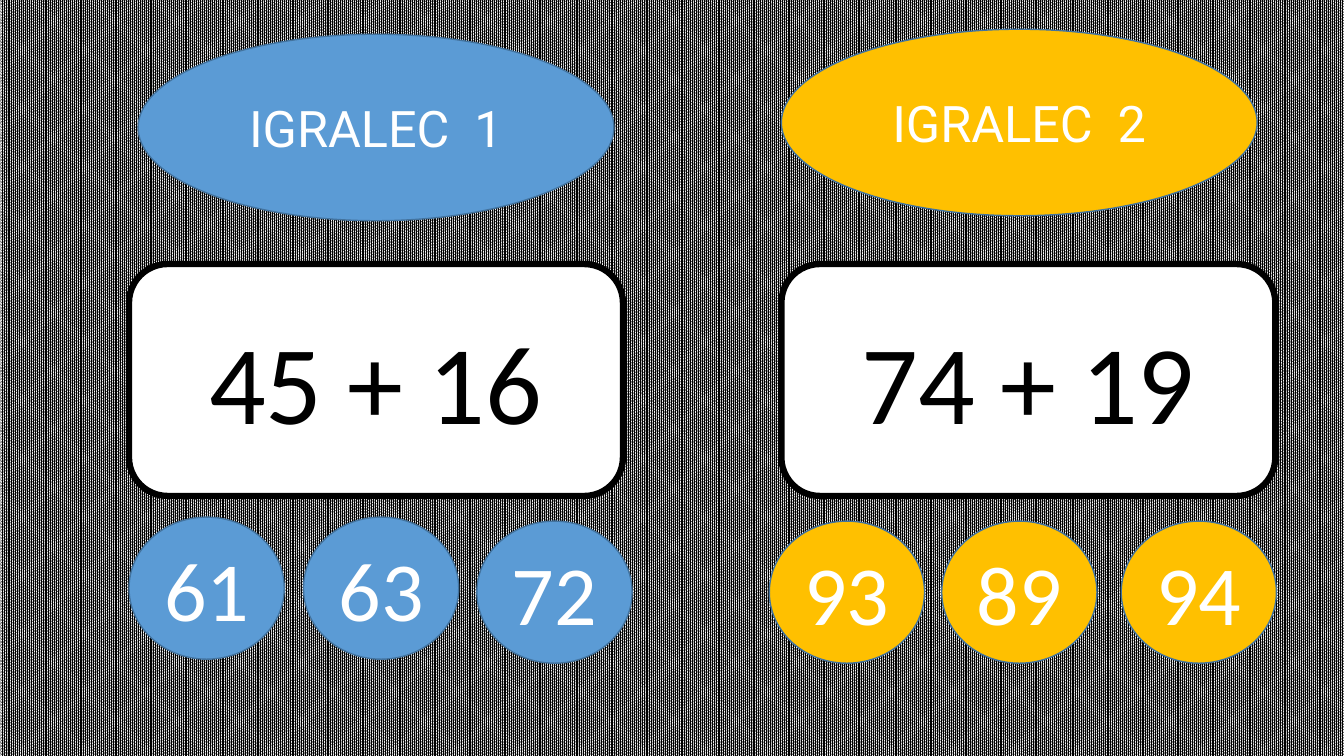
from dataclasses import dataclass

from pptx import Presentation
from pptx.dml.color import RGBColor
from pptx.enum.dml import MSO_PATTERN
from pptx.enum.shapes import MSO_SHAPE
from pptx.enum.text import MSO_ANCHOR, PP_ALIGN
from pptx.util import Inches, Pt

WIDTH, HEIGHT = Inches(13.33), Inches(7.5)
BLACK, WHITE = "000000", "FFFFFF"
BLUE, GOLD, OUTLINE = "5B9BD5", "FFC000", "43739E"
BADGE_SIZE = (35.4, 24.67)
CARD_SIZE = (36.75, 30.67)
ANSWER_SIZE = (11.55, 18.8)
CARD_TOP = 34.93


@dataclass
class Player:
    name: str
    color: str
    badge_place: tuple
    sum_text: str
    card_left: float
    answers: tuple


PLAYERS = (
    Player("IGRALEC  1", BLUE, (10.28, 4.53), "45 + 16", 9.6,
           (("61", 9.6, 68.4), ("63", 22.58, 68.4), ("72", 35.48, 68.93))),
    Player("IGRALEC  2", GOLD, (58.14, 3.87), "74 + 19", 58.14,
           (("93", 57.24, 68.93), ("89", 70.07, 68.93), ("94", 83.42, 68.93))),
)


def set_color(color_format, hex_color):
    color_format.rgb = RGBColor.from_string(hex_color)


def across(percent):
    return round(WIDTH * percent / 100)


def down(percent):
    return round(HEIGHT * percent / 100)


def paint_background(slide):
    fill = slide.background.fill
    fill.patterned()
    fill.pattern = MSO_PATTERN.PERCENT_90
    set_color(fill.fore_color, BLACK)
    set_color(fill.back_color, WHITE)


def add_box(slide, kind, place, size, fill_color, line_color, line_width):
    shape = slide.shapes.add_shape(
        kind, across(place[0]), down(place[1]), across(size[0]), down(size[1]))
    shape.shadow.inherit = False
    shape.fill.solid()
    set_color(shape.fill.fore_color, fill_color)
    set_color(shape.line.color, line_color)
    shape.line.width = Pt(line_width)
    return shape


def write_text(shape, text, size, color, font_name="Calibri"):
    frame = shape.text_frame
    frame.word_wrap = True
    frame.vertical_anchor = MSO_ANCHOR.MIDDLE
    paragraph = frame.paragraphs[0]
    paragraph.alignment = PP_ALIGN.CENTER
    run = paragraph.add_run()
    run.text = text
    run.font.name = font_name
    run.font.size = Pt(size)
    set_color(run.font.color, color)


def add_oval(slide, place, size, color):
    return add_box(slide, MSO_SHAPE.OVAL, place, size, color, OUTLINE, 1)


def add_player(slide, player):
    card = add_box(slide, MSO_SHAPE.ROUNDED_RECTANGLE, (player.card_left, CARD_TOP),
                   CARD_SIZE, WHITE, BLACK, 4.5)
    write_text(card, player.sum_text, 80, BLACK)
    badge = add_oval(slide, player.badge_place, BADGE_SIZE, player.color)
    write_text(badge, player.name, 36, WHITE, "Roboto")
    for number, left, top in player.answers:
        answer = add_oval(slide, (left, top), ANSWER_SIZE, player.color)
        write_text(answer, number, 60, WHITE)


def main():
    presentation = Presentation()
    presentation.slide_width, presentation.slide_height = WIDTH, HEIGHT
    slide = presentation.slides.add_slide(presentation.slide_layouts[6])
    paint_background(slide)
    for player in PLAYERS:
        add_player(slide, player)
    presentation.save("out.pptx")


if __name__ == "__main__":
    main()
